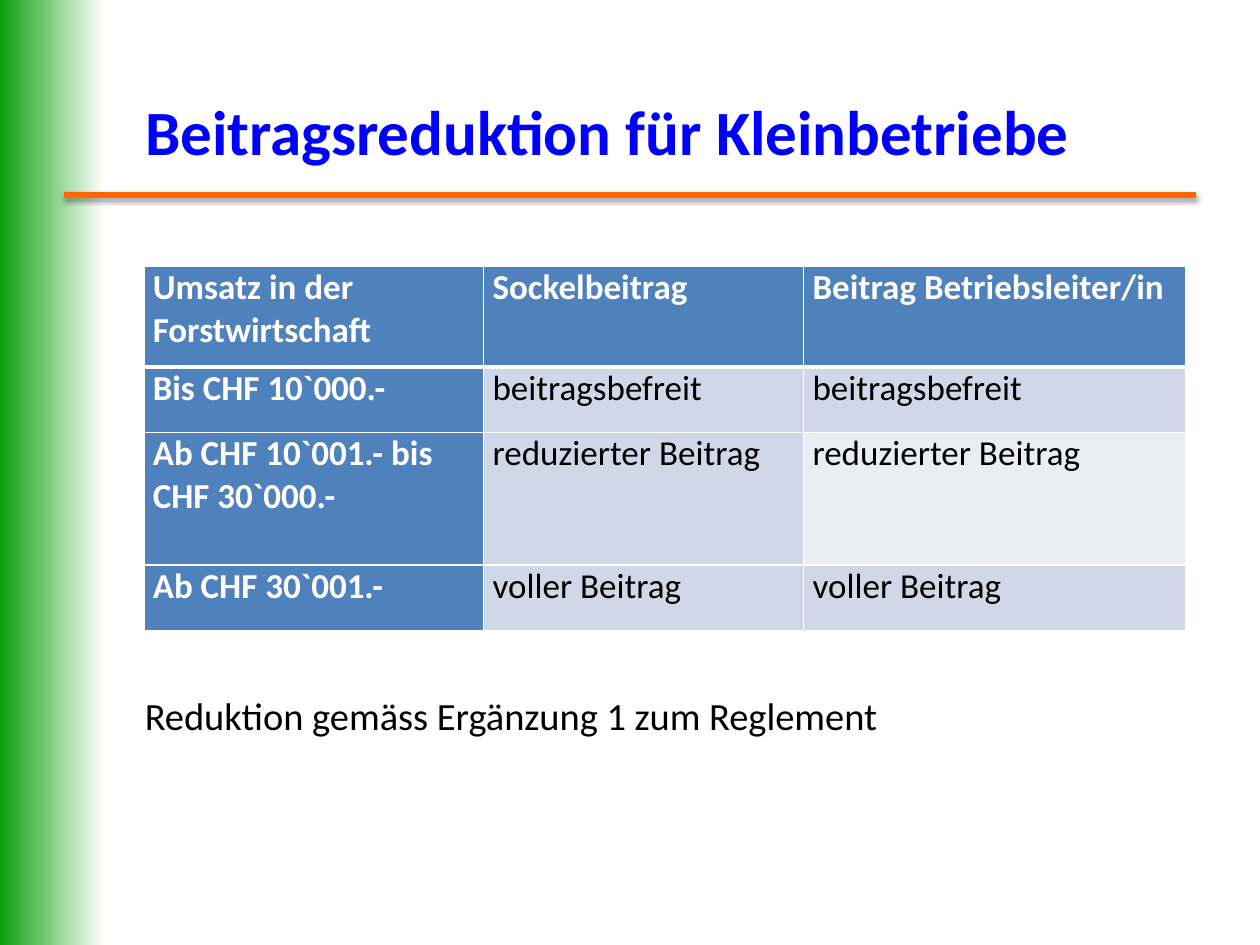
from lxml import etree
from pptx import Presentation
from pptx import util as u
from pptx.dml.color import RGBColor
from pptx.enum import shapes, text
from pptx.oxml import ns

FONT = "Calibri"
WHITE, BLACK, BLUE = "FFFFFF", "000000", "4F81BD"
LIGHT, LIGHTER = "D0D8E8", "E9EDF4"
ROWS = [
    ("Umsatz in der Forstwirtschaft", "Sockelbeitrag", "Beitrag Betriebsleiter/in"),
    ("Bis CHF 10`000.-", "beitragsbefreit", "beitragsbefreit"),
    ("Ab CHF 10`001.- bis CHF 30`000.-", "reduzierter Beitrag", "reduzierter Beitrag"),
    ("Ab CHF 30`001.-", "voller Beitrag", "voller Beitrag"),
]
COLUMN_WIDTHS = [6.85, 6.45, 7.7]
ROW_HEIGHTS = [2.03, 1.32, 2.67, 1.32]


def colour(value):
    return RGBColor.from_string(value)


def box_cm(*lengths):
    return [u.Cm(length) for length in lengths]


def add_element(parent, tag, **attributes):
    return etree.SubElement(parent, ns.qn(tag), attributes)


def add_run(paragraph, words, size, hex_colour, bold=False):
    run = paragraph.add_run()
    run.text = words
    run.font.name = FONT
    run.font.size = u.Pt(size)
    run.font.bold = bold
    run.font.color.rgb = colour(hex_colour)


def add_side_band(slide, left, top, width, height):
    band = slide.shapes.add_shape(
        shapes.MSO_SHAPE.RECTANGLE, *box_cm(left, top, width, height))
    band.shadow.inherit = False
    band.line.fill.background()
    band.fill.gradient()
    band.fill.gradient_angle = 0
    for stop, hex_colour in zip(band.fill.gradient_stops, ("009B00", WHITE)):
        stop.color.rgb = colour(hex_colour)


def add_title_rule(slide, left, top, width):
    rule = slide.shapes.add_connector(
        shapes.MSO_CONNECTOR.STRAIGHT, *box_cm(left, top, left + width, top))
    rule.line.color.rgb = colour("FF6600")
    rule.line.width = u.Pt(3)
    effects = add_element(rule._element.spPr, "a:effectLst")
    shadow = add_element(effects, "a:outerShdw", blurRad="40000", dist="20000",
                         dir="5400000", rotWithShape="0")
    shade = add_element(shadow, "a:srgbClr", val=BLACK)
    add_element(shade, "a:alpha", val="38000")


def place_title(slide, left, top, width, height):
    title = slide.shapes.title
    title.left, title.top, title.width, title.height = box_cm(left, top, width, height)
    frame = title.text_frame
    frame.auto_size = text.MSO_AUTO_SIZE.NONE
    frame.vertical_anchor = text.MSO_ANCHOR.MIDDLE
    frame.paragraphs[0].alignment = text.PP_ALIGN.LEFT
    add_run(frame.paragraphs[0], "Beitragsreduktion für Kleinbetriebe", 36, "0000FF", True)


def set_borders(cell, top, bottom):
    properties = cell._tc.get_or_add_tcPr()
    for side, points in (("L", 1), ("R", 1), ("T", top), ("B", bottom)):
        border = add_element(properties, f"a:ln{side}", w=str(u.Pt(points)))
        fill = add_element(border, "a:solidFill")
        add_element(fill, "a:srgbClr", val=WHITE)


def format_cell(cell, words, row, column):
    is_heading = row == 0 or column == 0
    set_borders(cell, 3 if row == 1 else 1, 3 if row == 0 else 1)
    cell.fill.solid()
    body_fill = LIGHTER if (row, column) == (2, 2) else LIGHT
    cell.fill.fore_color.rgb = colour(BLUE if is_heading else body_fill)
    cell.margin_left = cell.margin_right = u.Cm(0.18)
    cell.margin_top = cell.margin_bottom = 0
    paragraph = cell.text_frame.paragraphs[0]
    paragraph.space_before = paragraph.space_after = u.Pt(4)
    add_run(paragraph, words, 20, WHITE if is_heading else BLACK, is_heading)


def add_contribution_table(slide, left, top):
    table = slide.shapes.add_table(
        len(ROWS), len(COLUMN_WIDTHS),
        *box_cm(left, top, sum(COLUMN_WIDTHS), sum(ROW_HEIGHTS))).table
    for column, width in zip(table.columns, COLUMN_WIDTHS):
        column.width = u.Cm(width)
    for row, height in zip(table.rows, ROW_HEIGHTS):
        row.height = u.Cm(height)
    for row, entries in enumerate(ROWS):
        for column, words in enumerate(entries):
            format_cell(table.cell(row, column), words, row, column)


def add_note(slide, left, top, width, height):
    frame = slide.shapes.add_textbox(*box_cm(left, top, width, height)).text_frame
    frame.word_wrap = True
    frame.auto_size = text.MSO_AUTO_SIZE.SHAPE_TO_FIT_TEXT
    add_run(frame.paragraphs[0], "Reduktion gemäss Ergänzung 1 zum Reglement", 22, BLACK)


def main():
    presentation = Presentation()
    presentation.slide_width, presentation.slide_height = box_cm(25.4, 19.05)
    slide = presentation.slides.add_slide(presentation.slide_layouts[5])
    add_side_band(slide, -0.1, 0, 2.2, 19.13)
    add_title_rule(slide, 1.3, 3.93, 22.8)
    place_title(slide, 2.67, 1.52, 21.82, 2.21)
    add_contribution_table(slide, 2.9, 5.37)
    add_note(slide, 2.67, 13.82, 18.44, 1.2)
    presentation.save("out.pptx")


if __name__ == "__main__":
    main()
